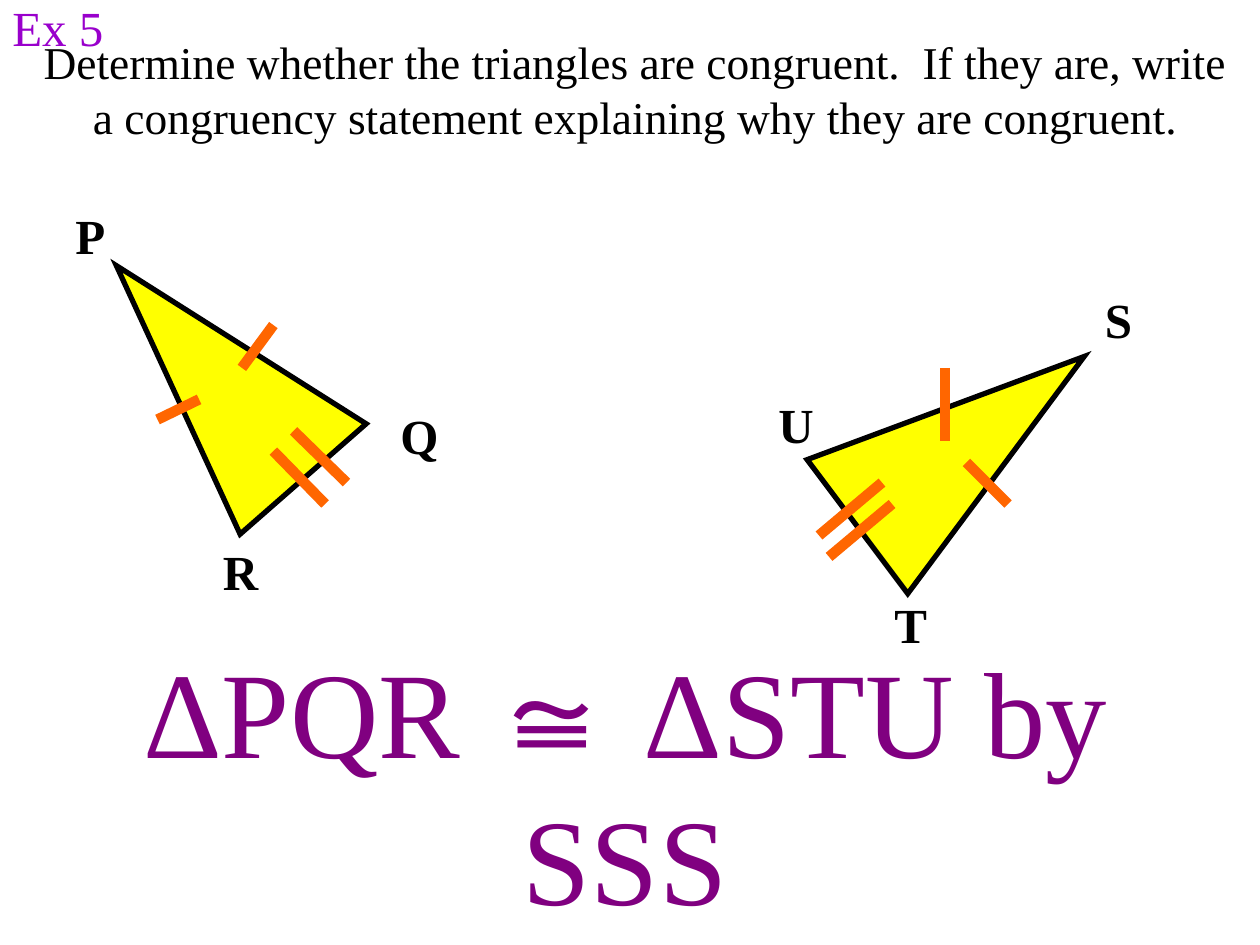
from lxml.etree import SubElement
from pptx import Presentation
from pptx.dml.color import RGBColor
from pptx.enum.shapes import MSO_CONNECTOR, MSO_SHAPE
from pptx.enum.text import MSO_ANCHOR, MSO_AUTO_SIZE, PP_ALIGN
from pptx.oxml.ns import qn
from pptx.util import Inches, Pt

COLORS = {
    "text": "000000",
    "example": "9900CC",
    "answer": "800080",
    "triangle": "FFFF00",
    "tick": "FF6600",
}


class Worksheet:
    font_name = "Times New Roman"

    def __init__(self, deck):
        self.page = deck.slides.add_slide(deck.slide_layouts[5])

    def color(self, name):
        return RGBColor.from_string(COLORS[name])

    def set_text(self, box, text, size, color, align, anchor, bold=False):
        frame = box.text_frame
        frame.text = text
        frame.word_wrap = True
        frame.auto_size = MSO_AUTO_SIZE.NONE
        frame.vertical_anchor = anchor
        paragraph = frame.paragraphs[0]
        paragraph.alignment = align
        for span in paragraph.runs:
            span.font.name = self.font_name
            span.font.size = Pt(size)
            span.font.bold = bold
            span.font.color.rgb = self.color(color)

    def title(self, text, left, top, width, height):
        box = self.page.shapes.title
        box.left, box.top = Inches(left), Inches(top)
        box.width, box.height = Inches(width), Inches(height)
        self.set_text(box, text, 26, "text", PP_ALIGN.CENTER, MSO_ANCHOR.MIDDLE)

    def text(self, text, left, top, width, height, size, color,
             align=PP_ALIGN.LEFT, anchor=MSO_ANCHOR.TOP, bold=False):
        box = self.page.shapes.add_textbox(
            Inches(left), Inches(top), Inches(width), Inches(height))
        self.set_text(box, text, size, color, align, anchor, bold)

    def vertex(self, letter, left, top, width=0.39):
        self.text(letter, left, top, width, 0.57, 28, "text", bold=True)

    def triangle(self, left, top, rotation):
        shape = self.page.shapes.add_shape(
            MSO_SHAPE.ISOSCELES_TRIANGLE,
            Inches(left), Inches(top), Inches(1.33), Inches(2.25))
        shape.rotation = rotation
        shape.shadow.inherit = False
        shape.fill.solid()
        shape.fill.fore_color.rgb = self.color("triangle")
        shape.line.color.rgb = self.color("text")
        shape.line.width = Pt(3)
        outline = shape._element.spPr.find(qn("a:ln"))
        SubElement(outline, qn("a:miter"), lim="800000")

    def tick(self, x1, y1, x2, y2):
        line = self.page.shapes.add_connector(
            MSO_CONNECTOR.STRAIGHT,
            Inches(x1), Inches(y1), Inches(x2), Inches(y2))
        line.line.color.rgb = self.color("tick")
        line.line.width = Pt(6)
        SubElement(line._element.spPr, qn("a:effectLst"))


def main():
    deck = Presentation()
    deck.slide_width, deck.slide_height = Inches(10), Inches(7.5)
    sheet = Worksheet(deck)

    sheet.title(
        "Determine whether the triangles are congruent.  If they are, "
        "write a congruency statement explaining why they are congruent.",
        0.17, 0.08, 9.75, 1.25)
    sheet.text("Ex 5", 0, 0, 2.5, 0.42, 28, "example",
               anchor=MSO_ANCHOR.MIDDLE)

    sheet.triangle(1, 1.83, 318.8)
    sheet.triangle(7.04, 2.38, 53.1)

    for vertex in (
        ("P", 0.5, 1.58), ("Q", 3.08, 3.17), ("R", 1.67, 4.25),
        ("S", 8.67, 2.25), ("T", 7, 4.67, 0.58), ("U", 6.08, 3.08, 0.55),
    ):
        sheet.vertex(*vertex)

    for tick in (
        (1.92, 2.92, 2.17, 2.58), (1.25, 3.33, 1.58, 3.17),
        (2.17, 3.58, 2.58, 4), (2.33, 3.42, 2.75, 3.83),
        (7.5, 2.92, 7.5, 3.5), (7.67, 3.67, 8, 4),
        (7, 3.83, 6.5, 4.25), (7.08, 4, 6.58, 4.42),
    ):
        sheet.tick(*tick)

    sheet.text("ΔPQR ≅ ΔSTU by SSS", 0.25, 5, 9.42, 1.27, 70, "answer",
               align=PP_ALIGN.CENTER)
    deck.save("out.pptx")


if __name__ == "__main__":
    main()
